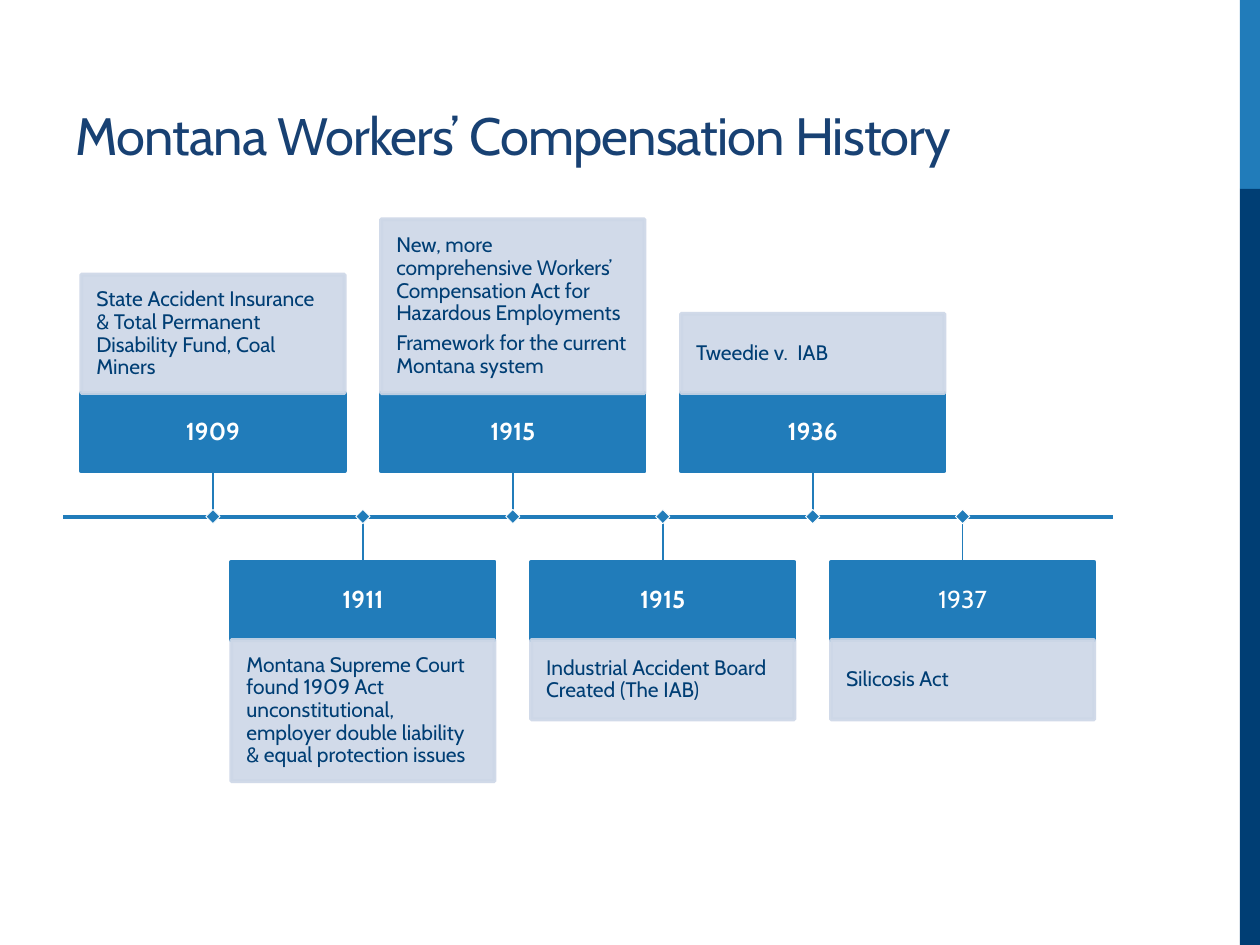
from lxml.etree import SubElement
from pptx import Presentation
from pptx.dml.color import RGBColor
from pptx.enum.shapes import MSO_CONNECTOR, MSO_SHAPE
from pptx.enum.text import MSO_ANCHOR, PP_ALIGN
from pptx.oxml.ns import qn
from pptx.util import Inches, Pt

TITLE = "Montana Workers’ Compensation History"
# Year, bold year, height of the note, paragraphs of the note
EVENTS = [
    ("1909", True, 0.94, ["State Accident Insurance & Total Permanent "
                          "Disability Fund, Coal Miners"]),
    ("1911", True, 1.12, ["Montana Supreme Court found 1909 Act unconstitutional, "
                          "employer double liability & equal protection issues"]),
    ("1915", True, 1.38, ["New, more comprehensive Workers’ Compensation Act "
                          "for Hazardous Employments",
                          "Framework for the current Montana system"]),
    ("1915", True, 0.63, ["Industrial Accident Board Created (The IAB)"]),
    ("1936", True, 0.63, ["Tweedie v.  IAB"]),
    ("1937", False, 0.63, ["Silicosis Act"]),
]
COLORS = {"blue": "217CBA", "navy": "003E74", "title": "184173",
          "pale": "CDD7E7", "white": "FFFFFF"}
FONT = "Cabin"
AXIS_Y, AXIS_LEFT, AXIS_RIGHT = 4.1, 0.5, 8.83
FIRST_X, STEP = 1.69, 1.19
CARD_W, YEAR_H, STEM, MARK = 2.09, 0.62, 0.36, 0.08

YEAR_STYLE = {"size": 14, "color": "white", "inset": 0.08, "align": PP_ALIGN.CENTER}
NOTE_STYLE = {"size": 12, "color": "navy", "inset": 0.12, "align": PP_ALIGN.LEFT}


def rgb(name):
    return RGBColor.from_string(COLORS[name])


def set_font(font, size, color, bold=False):
    for key, value in {"name": FONT, "size": Pt(size), "bold": bold}.items():
        setattr(font, key, value)
    font.color.rgb = rgb(color)


def add_box(slide, left, top, width, height, fill, line=None, weight=2.25):
    box = slide.shapes.add_shape(MSO_SHAPE.RECTANGLE, Inches(left), Inches(top),
                                 Inches(width), Inches(height))
    box.shadow.inherit = False
    box.fill.solid()
    box.fill.fore_color.rgb = rgb(fill)
    if line:
        box.line.color.rgb = rgb(line)
        box.line.width = Pt(weight)
    else:
        box.line.fill.background()
    return box


def add_line(slide, x1, y1, x2, y2, weight):
    line = slide.shapes.add_connector(MSO_CONNECTOR.STRAIGHT, Inches(x1), Inches(y1),
                                      Inches(x2), Inches(y2))
    line.line.color.rgb = rgb("blue")
    line.line.width = Pt(weight)
    SubElement(line._element.spPr, qn("a:effectLst"))


def set_alpha(box, percent):
    """Make the fill and the outline of a box partly transparent."""
    for color in box._element.spPr.iter(qn("a:srgbClr")):
        SubElement(color, qn("a:alpha")).set("val", str(percent * 1000))


def write(box, texts, style, bold=False):
    frame = box.text_frame
    frame.word_wrap = True
    frame.vertical_anchor = MSO_ANCHOR.MIDDLE
    for side in ("left", "right", "top", "bottom"):
        setattr(frame, f"margin_{side}", Inches(style["inset"]))
    for i, text in enumerate(texts):
        para = frame.add_paragraph() if i else frame.paragraphs[0]
        para.alignment = style["align"]
        para.line_spacing = 0.9
        para.space_after = Pt(style["size"] * 0.35)
        run = para.add_run()
        run.text = text
        set_font(run.font, style["size"], style["color"], bold)


def add_title(slide):
    title = slide.shapes.title
    for key, value in {"left": 0.5, "top": 0.37, "width": 8.33, "height": 1}.items():
        setattr(title, key, Inches(value))
    frame = title.text_frame
    frame.vertical_anchor = MSO_ANCHOR.BOTTOM
    frame.word_wrap = True
    para = frame.paragraphs[0]
    para.alignment = PP_ALIGN.LEFT
    run = para.add_run()
    run.text = TITLE
    set_font(run.font, 30, "title")
    run._r.get_or_add_rPr().set("spc", "-50")


def add_event(slide, index, year, bold, note_h, notes):
    """Place even events above the axis and odd ones below it."""
    x = FIRST_X + index * STEP
    left = x - CARD_W / 2
    if index % 2 == 0:
        stem_y = AXIS_Y - STEM
        year_y = stem_y - YEAR_H
        note_y = year_y - note_h
    else:
        stem_y = year_y = AXIS_Y + STEM
        note_y = year_y + YEAR_H
    year_box = add_box(slide, left, year_y, CARD_W, YEAR_H, "blue", "blue")
    write(year_box, [year], YEAR_STYLE, bold)
    note_box = add_box(slide, left, note_y, CARD_W, note_h, "pale", "pale")
    set_alpha(note_box, 90)
    write(note_box, notes, NOTE_STYLE)
    add_line(slide, x, stem_y, x, AXIS_Y, 1)
    mark = add_box(slide, x - MARK / 2, AXIS_Y - MARK / 2, MARK, MARK,
                   "blue", "white", 0.5)
    mark.rotation = 45


def main():
    deck = Presentation()
    deck.slide_width, deck.slide_height = Inches(10), Inches(7.5)
    slide = deck.slides.add_slide(deck.slide_layouts[5])
    add_box(slide, 9.84, 0, 0.16, 1.5, "blue")
    add_box(slide, 9.84, 1.5, 0.16, 6, "navy")
    add_title(slide)
    add_line(slide, AXIS_LEFT, AXIS_Y, AXIS_RIGHT, AXIS_Y, 2.25)
    for index, event in enumerate(EVENTS):
        add_event(slide, index, *event)
    deck.save("out.pptx")


if __name__ == "__main__":
    main()
